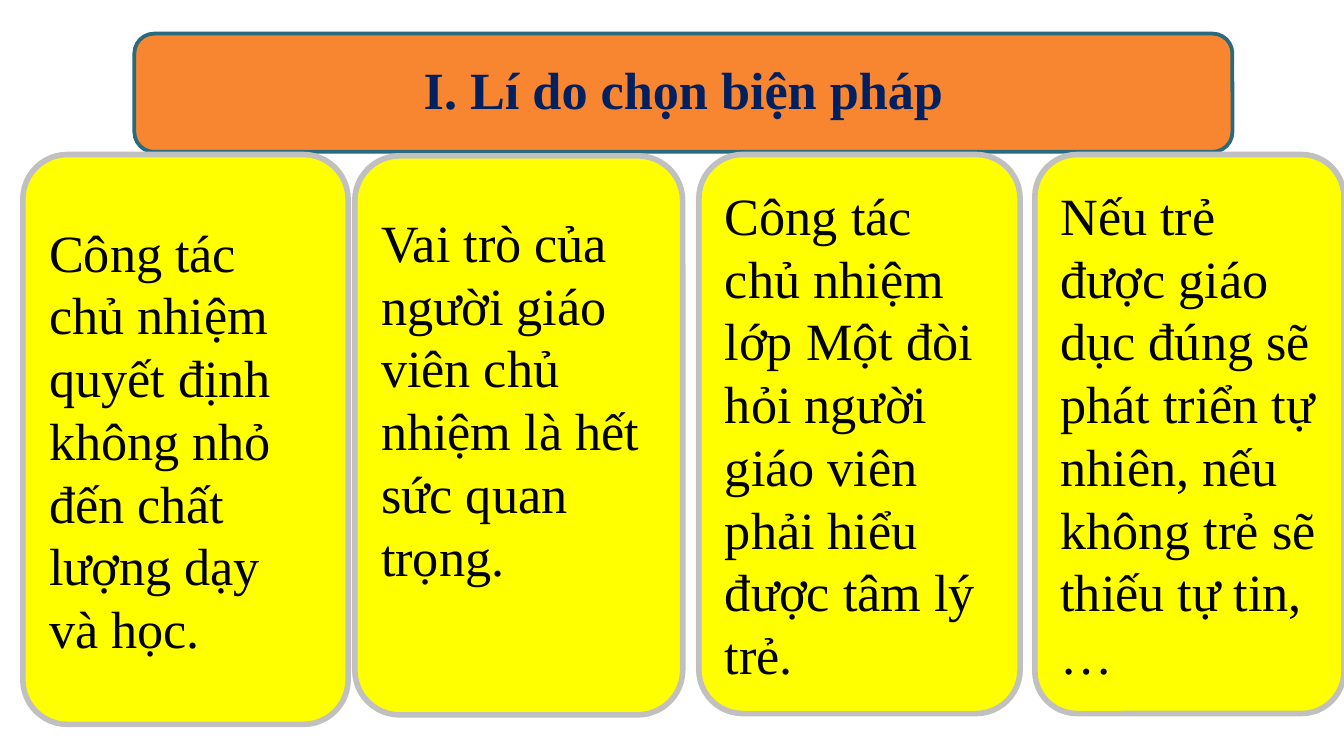
"""Build a slide with a title banner above four reason cards."""
from dataclasses import dataclass

from pptx import Presentation
from pptx.dml.color import RGBColor
from pptx.enum.shapes import MSO_SHAPE
from pptx.enum.text import MSO_ANCHOR, PP_ALIGN
from pptx.util import Inches, Pt

ROUNDED = MSO_SHAPE.ROUNDED_RECTANGLE
MIDDLE = MSO_ANCHOR.MIDDLE
LEFT, CENTER = PP_ALIGN.LEFT, PP_ALIGN.CENTER
FONT = "Times New Roman"


@dataclass
class Panel:
    text: str
    left: float
    top: float
    width: float
    height: float
    fill: str = "FFFF00"
    line: str = "C0C0C0"
    line_width: float = 3
    color: str = "000000"
    corner: float = 0.137
    bold: bool = False
    align: PP_ALIGN = LEFT
    line_spacing: float = 1.0
    space_before: float = 0
    bottom_inset: float = 0.05


BANNER = Panel("I. Lí do chọn biện pháp", 1, 0.25, 8.17, 0.88, "F88631", "296B7C", 2,
               "002060", 0.167, True, CENTER, 0.9, 10)
CARDS = [
    Panel("Công tác chủ nhiệm quyết định không nhỏ đến chất lượng dạy và học.",
          0.17, 1.15, 2.42, 4.24),
    Panel("Vai trò của người giáo viên chủ nhiệm là hết sức quan trọng.",
          2.64, 1.16, 2.44, 4.16, bottom_inset=0.6),
    Panel("Công tác chủ nhiệm lớp Một đòi hỏi người giáo viên phải hiểu được tâm lý trẻ.",
          5.2, 1.15, 2.39, 4.16),
    Panel("Nếu trẻ được giáo dục đúng sẽ phát triển tự nhiên, nếu không trẻ sẽ thiếu tự tin, …",
          7.7, 1.15, 2.3, 4.16),
]


def rgb(value: str) -> RGBColor:
    return RGBColor.from_string(value)


def draw_panel(s, panel: Panel) -> None:
    sp = s.shapes.add_shape(ROUNDED, Inches(panel.left), Inches(panel.top),
                            Inches(panel.width), Inches(panel.height))
    sp.shadow.inherit = False
    sp.adjustments[0] = panel.corner
    sp.fill.solid()
    sp.fill.fore_color.rgb = rgb(panel.fill)
    sp.line.color.rgb = rgb(panel.line)
    sp.line.width = Pt(panel.line_width)
    tf = sp.text_frame
    tf.text = panel.text
    tf.word_wrap = True
    tf.vertical_anchor = MIDDLE
    tf.margin_bottom = Inches(panel.bottom_inset)
    p = tf.paragraphs[0]
    p.alignment = panel.align
    p.line_spacing = panel.line_spacing
    p.space_before = Pt(panel.space_before)
    font = p.runs[0].font
    font.name = FONT
    font.size = Pt(28)
    font.bold = panel.bold
    font.color.rgb = rgb(panel.color)


def main() -> None:
    prs = Presentation()
    prs.slide_width = Inches(10)
    prs.slide_height = prs.slide_width * 9 // 16
    s = prs.slides.add_slide(prs.slide_layouts[6])
    for panel in [BANNER, *CARDS]:
        draw_panel(s, panel)
    prs.save("out.pptx")


if __name__ == "__main__":
    main()
